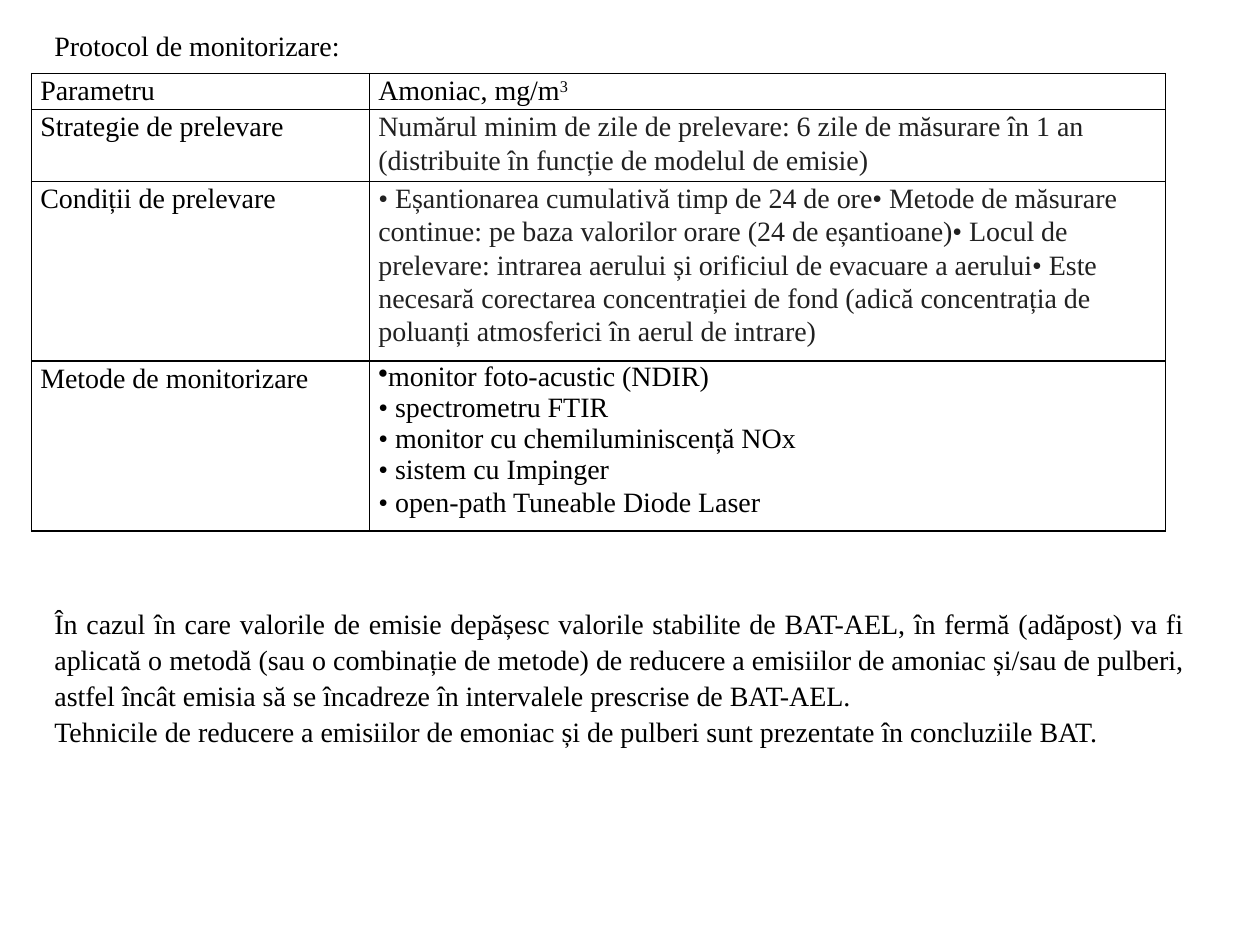
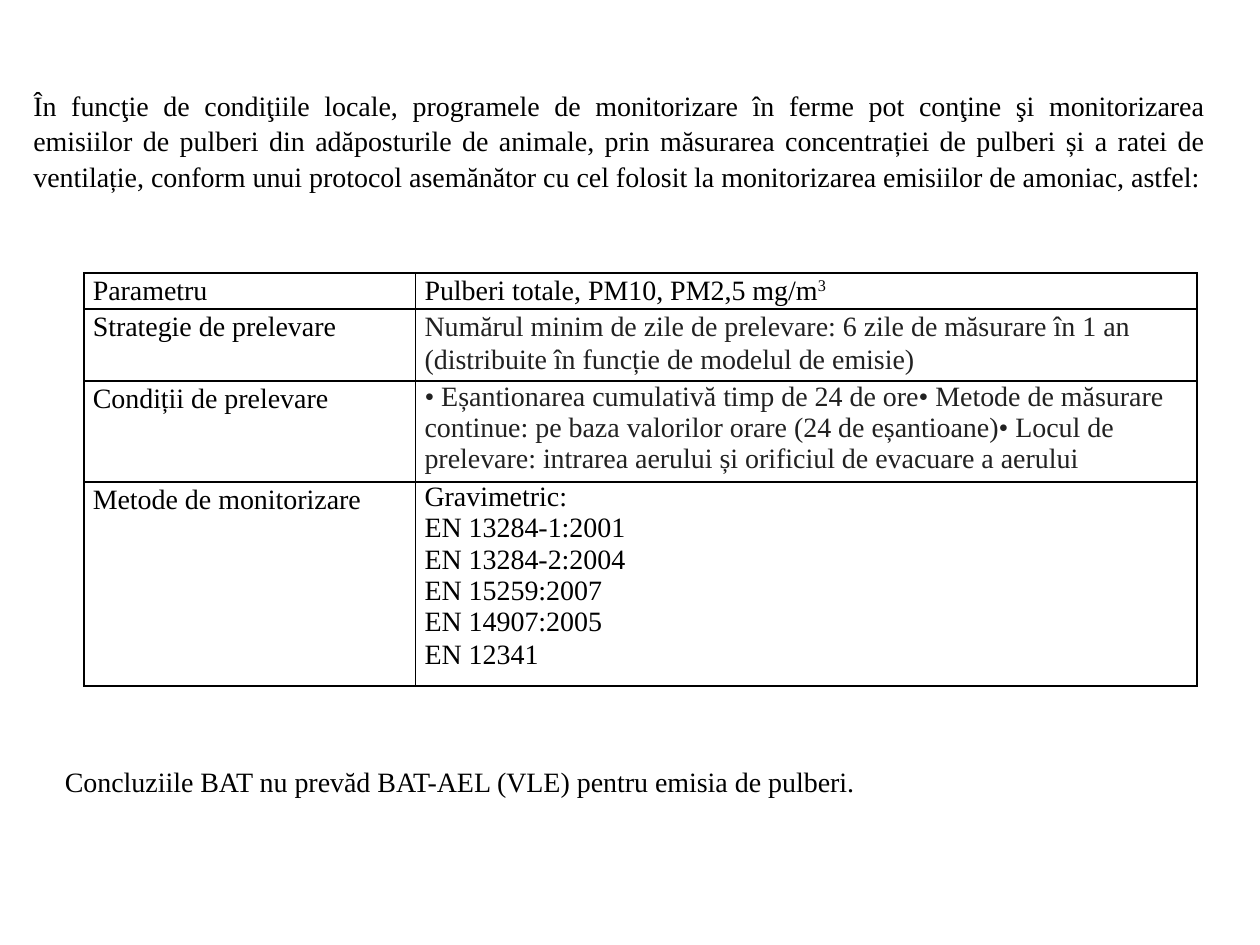
"""Builds two slides on monitoring protocols for ammonia and dust emissions."""
import pptx
import pptx.dml.color
import pptx.enum.text
import pptx.oxml
import pptx.oxml.ns
import pptx.util

ALIGN = pptx.enum.text.PP_ALIGN
ANCHOR = pptx.enum.text.MSO_ANCHOR
FIT = pptx.enum.text.MSO_AUTO_SIZE

FONT, SIZE = "Times New Roman", 16
BLACK, GREY, WHITE = "000000", "212121", "FFFFFF"
LOOSE, SINGLE = 1.07, 1.0
CELLS_PER_INCH = 12
LABELS = ["Parametru", "Strategie de prelevare", "Condiții de prelevare", "Metode de monitorizare"]
STRATEGY = ("Numărul minim de zile de prelevare: 6 zile de măsurare în 1 an "
            "(distribuite în funcție de modelul de emisie)")
SAMPLING = ("• Eșantionarea cumulativă timp de 24 de ore• Metode de măsurare continue: "
            "pe baza valorilor orare (24 de eșantioane)• Locul de prelevare: "
            "intrarea aerului și orificiul de evacuare a aerului")
BACKGROUND = ("• Este necesară corectarea concentrației de fond (adică concentrația de "
              "poluanți atmosferici în aerul de intrare)")

SLIDES = [
    {
        "table": {
            "at": (3, 7), "columns": (32.2, 75.8), "rows": (3.45, 6.85, 17.1, 16.2),
            "values": [["Amoniac, mg/m"], [STRATEGY], [SAMPLING + BACKGROUND],
                       ["monitor foto-acustic (NDIR)", "• spectrometru FTIR",
                        "• monitor cu chemiluminiscență NOx", "• sistem cu Impinger",
                        "• open-path Tuneable Diode Laser"]],
            "sampling_spacing": LOOSE, "bullet_first_method": True,
        },
        "boxes": [
            {"at": (4, 2, 30, 3.8), "lines": ["Protocol de monitorizare:"],
             "banner": True, "wrap": False},
            {"at": (4, 57, 110, 14.2), "align": ALIGN.JUSTIFY, "lines": [
                "În cazul în care valorile de emisie depășesc valorile stabilite de BAT-AEL, "
                "în fermă (adăpost) va fi aplicată o metodă (sau o combinație de metode) de "
                "reducere a emisiilor de amoniac și/sau de pulberi, astfel încât emisia să se "
                "încadreze în intervalele prescrise de BAT-AEL.",
                "Tehnicile de reducere a emisiilor de emoniac și de pulberi sunt prezentate "
                "în concluziile BAT."]},
        ],
    },
    {
        "table": {
            "at": (8, 26), "columns": (31.6, 74.4), "rows": (3.45, 6.85, 9.55, 19.4),
            "values": [["Pulberi totale, PM10, PM2,5 mg/m"], [STRATEGY], [SAMPLING],
                       ["Gravimetric:", "EN 13284-1:2001", "EN 13284-2:2004",
                        "EN 15259:2007", "EN 14907:2005", "EN 12341"]],
            "sampling_spacing": SINGLE, "bullet_first_method": False,
        },
        "boxes": [
            {"at": (2, 6.25, 114, 13.5), "align": ALIGN.JUSTIFY, "banner": True, "lines": [
                "În funcţie de condiţiile locale, programele de monitorizare în ferme pot "
                "conţine şi monitorizarea emisiilor de pulberi din adăposturile de animale, "
                "prin măsurarea concentrației de pulberi și a ratei de ventilație, conform "
                "unui protocol asemănător cu cel folosit la monitorizarea emisiilor de "
                "amoniac, astfel:"]},
            {"at": (5, 72, 109, 4.4),
             "lines": ["Concluziile BAT nu prevăd BAT-AEL (VLE) pentru emisia de pulberi."]},
        ],
    },
]


def grid(count):
    return pptx.util.Inches(count / CELLS_PER_INCH)


def rgb(color):
    return pptx.dml.color.RGBColor.from_string(color)


def write(para, text, color=BLACK, spacing=LOOSE, align=ALIGN.LEFT, bullet=False, power=""):
    para.alignment, para.line_spacing = align, spacing
    if bullet:
        mark = pptx.oxml.ns.qn("a:buChar")
        para._p.get_or_add_pPr().append(para._p.makeelement(mark, {"char": "•"}))
    for part in filter(None, (text, power)):
        span = para.add_run()
        span.text = part
        span.font.name, span.font.size = FONT, pptx.util.Pt(SIZE)
        span.font.color.rgb = rgb(color)
    if power:
        span._r.get_or_add_rPr().set("baseline", "30000")


def paragraphs(frame, count):
    return [frame.paragraphs[0]] + [frame.add_paragraph() for _ in range(count - 1)]


def add_box(page, at, lines, align=ALIGN.LEFT, banner=False, wrap=True):
    box = page.shapes.add_textbox(*map(grid, at))
    frame = box.text_frame
    frame.word_wrap, frame.auto_size = wrap, FIT.SHAPE_TO_FIT_TEXT
    if banner:
        box.fill.solid()
        box.fill.fore_color.rgb = rgb(WHITE)
        frame.vertical_anchor, frame.margin_bottom = ANCHOR.MIDDLE, 0
    for para, line in zip(paragraphs(frame, len(lines)), lines):
        write(para, line, align=align)


def format_cell(cell):
    cell.margin_left = cell.margin_right = pptx.util.Inches(0.07)
    cell.margin_top = cell.margin_bottom = 0
    properties = cell._tc.get_or_add_tcPr()
    for side in ("lnL", "lnR", "lnT", "lnB"):
        properties.append(pptx.oxml.parse_xml(
            f'<a:{side} {pptx.oxml.ns.nsdecls("a")} w="{pptx.util.Pt(1)}">'
            f'<a:solidFill><a:srgbClr val="{BLACK}"/></a:solidFill></a:{side}>'))
    cell.fill.background()


def add_protocol(page, at, columns, rows, values, sampling_spacing, bullet_first_method):
    size = sum(columns), sum(rows)
    table = page.shapes.add_table(len(rows), len(columns), *map(grid, at + size)).table
    table.first_row = table.horz_banding = False
    for column, width in zip(table.columns, columns):
        column.width = grid(width)
    for index, (label, lines) in enumerate(zip(LABELS, values)):
        table.rows[index].height = grid(rows[index])
        label_cell, value_cell = table.cell(index, 0), table.cell(index, 1)
        format_cell(label_cell)
        format_cell(value_cell)
        write(label_cell.text_frame.paragraphs[0], label)
        last = len(lines) - 1
        for place, para in enumerate(paragraphs(value_cell.text_frame, len(lines))):
            spacing = sampling_spacing if index == 2 else LOOSE if place == last else SINGLE
            write(para, lines[place], spacing=spacing,
                  color=GREY if index in (1, 2) else BLACK,
                  power="3" if index == 0 else "",
                  bullet=bullet_first_method and index == 3 and place == 0)


def main():
    deck = pptx.Presentation()
    deck.slide_width, deck.slide_height = pptx.util.Inches(10), pptx.util.Inches(7.5)
    for content in SLIDES:
        page = deck.slides.add_slide(deck.slide_layouts[6])
        add_protocol(page, **content["table"])
        for box in content["boxes"]:
            add_box(page, **box)
    deck.save("out.pptx")


if __name__ == "__main__":
    main()
